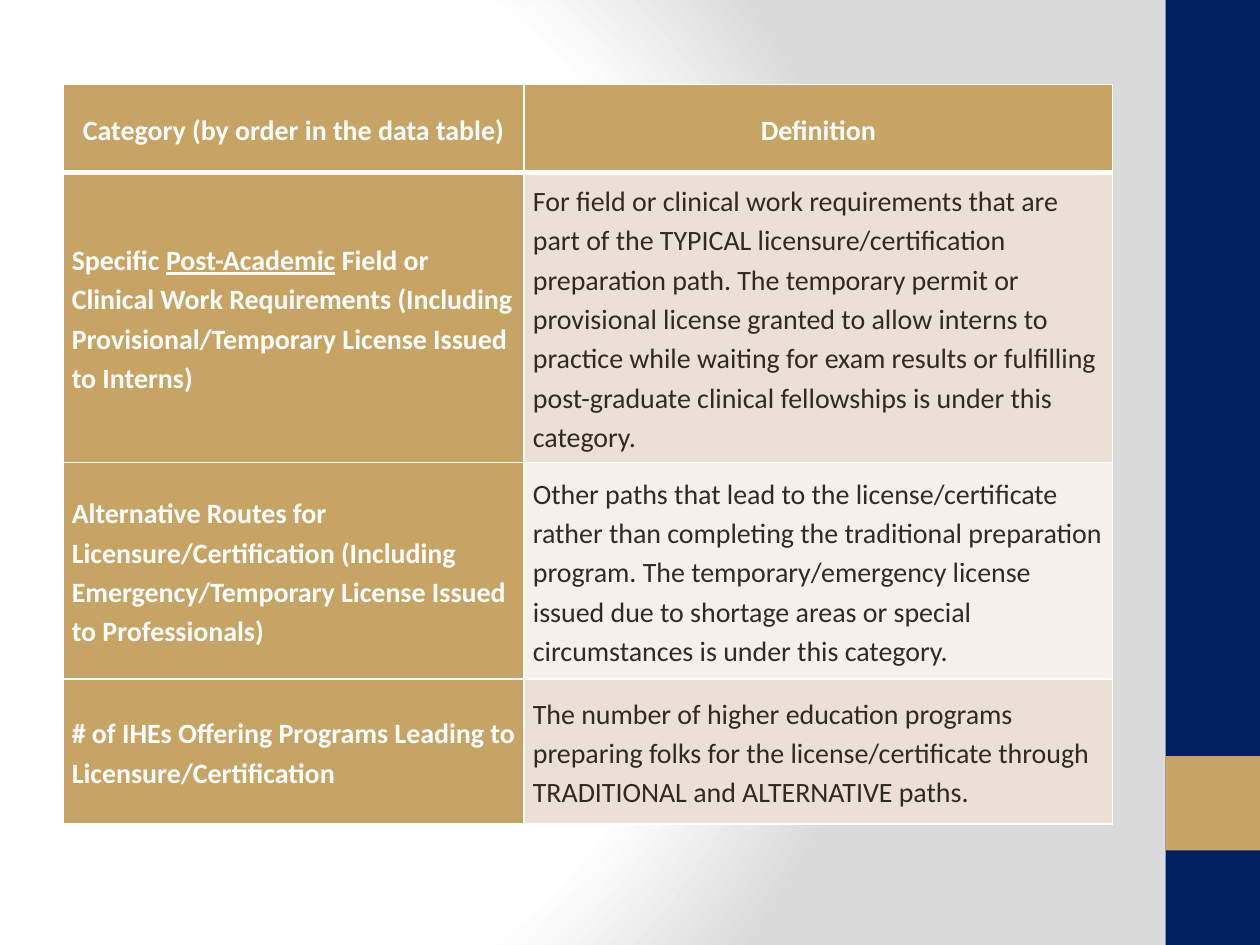
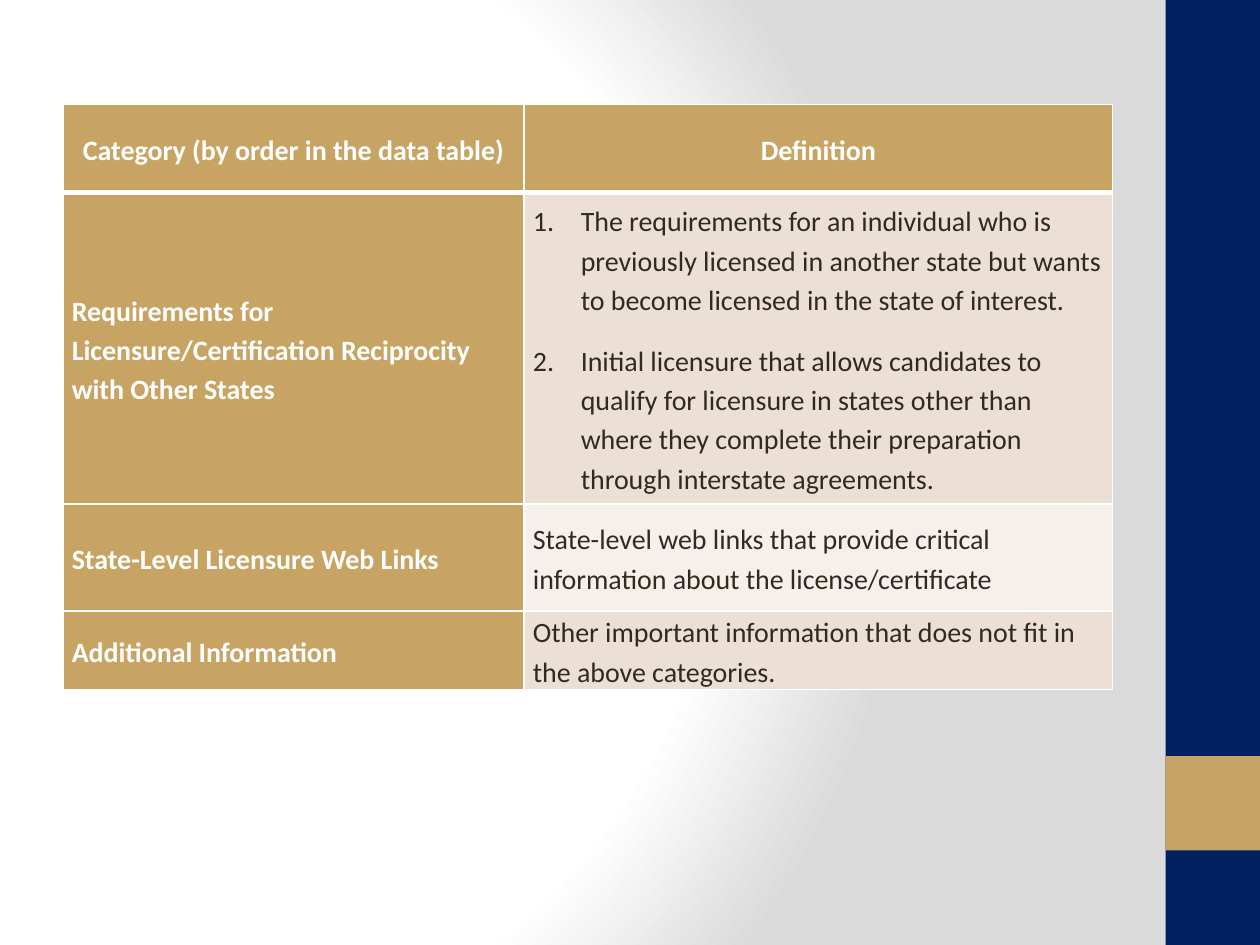
"""Build two slides of category definitions for licensure data."""
from dataclasses import dataclass

from pptx import Presentation
from pptx.dml.color import RGBColor
from pptx.enum.shapes import MSO_SHAPE
from pptx.enum.text import MSO_ANCHOR, PP_ALIGN
from pptx.oxml import parse_xml
from pptx.oxml.ns import nsdecls
from pptx.util import Emu, Inches, Pt

RECT = MSO_SHAPE.RECTANGLE
MIDDLE = MSO_ANCHOR.MIDDLE
LEFT, CENTER = PP_ALIGN.LEFT, PP_ALIGN.CENTER

WIDE, HIGH = Inches(10), Inches(7.5)
NAVY, GOLD, WHITE, GREY = "002060", "C8A464", "FFFFFF", "DADADA"
INK, SAND, CREAM = "2F2B20", "EBE0D3", "F5F0EA"
COLS = (36.6, 46.7)
SIDE = 5
INDENT = Inches(0.38)
HEAD = ("Category (by order in the data table)", ("Definition",))
FONT = {"name": "Calibri", "size": Pt(16)}
CELL = {
    "vertical_anchor": MIDDLE,
    "margin_left": Inches(0.07),
    "margin_right": Inches(0.07),
    "margin_top": 0,
    "margin_bottom": 0,
}
PARA = {"line_spacing": 1.15, "space_after": Pt(6)}


@dataclass
class Band:
    """A block of the side strip, in percent of the slide."""

    top: float
    height: float
    color: str


@dataclass
class Entry:
    """A table row: its name, its definitions and its height in percent."""

    name: str
    texts: tuple[str, ...]
    height: float


@dataclass
class Page:
    """A slide: the top of its table in percent, and the rows below the head."""

    top: float
    rows: list[Entry]


BANDS = (Band(0, 100, NAVY), Band(80, 10, GOLD))
PAGES = [
    Page(8.93, [
        Entry(
            "Specific _Post-Academic_ Field or Clinical Work Requirements "
            "(Including Provisional/Temporary License Issued to Interns)",
            ("For field or clinical work requirements that are part of the TYPICAL "
             "licensure/certification preparation path. The temporary permit or "
             "provisional license granted to allow interns to practice while waiting "
             "for exam results or fulfilling post-graduate clinical fellowships is "
             "under this category.",), 30.67),
        Entry(
            "Alternative Routes for Licensure/Certification (Including "
            "Emergency/Temporary License Issued to Professionals)",
            ("Other paths that lead to the license/certificate rather than completing "
             "the traditional preparation program. The temporary/emergency license "
             "issued due to shortage areas or special circumstances is under this "
             "category.",), 22.93),
        Entry(
            "# of IHEs Offering Programs Leading to Licensure/Certification",
            ("The number of higher education programs preparing folks for the "
             "license/certificate through TRADITIONAL and ALTERNATIVE paths.",), 15.33),
    ]),
    Page(11.07, [
        Entry(
            "Requirements for Licensure/Certification Reciprocity with Other States",
            ("The requirements for an individual who is previously licensed in another "
             "state but wants to become licensed in the state of interest.",
             "Initial licensure that allows candidates to qualify for licensure in "
             "states other than where they complete their preparation through "
             "interstate agreements."), 32.93),
        Entry(
            "State-Level Licensure Web Links",
            ("State-level web links that provide critical information about the "
             "license/certificate",), 11.33),
        Entry(
            "Additional Information",
            ("Other important information that does not fit in the above "
             "categories.",), 8.27),
    ]),
]


def across(share: float) -> Emu:
    """Turn a percent of the slide's width into a length."""
    return Emu(round(WIDE * share / 100))


def down(share: float) -> Emu:
    """Turn a percent of the slide's height into a length."""
    return Emu(round(HIGH * share / 100))


def paint(fill, color: str) -> None:
    """Fill with one solid colour."""
    fill.solid()
    fill.fore_color.rgb = RGBColor.from_string(color)


def apply(item, values: dict) -> None:
    """Set each format value on an object."""
    for key, value in values.items():
        setattr(item, key, value)


def shade(master) -> None:
    """Give the master its round white to grey backdrop."""
    master.background.fill.solid()
    holder = master.element.xpath(".//p:bgPr")[0]
    stops = "".join(
        f'<a:gs pos="{at * 1000}"><a:srgbClr val="{color}"/></a:gs>'
        for at, color in ((0, WHITE), (75, WHITE), (100, GREY))
    )
    holder.replace(holder[0], parse_xml(
        f'<a:gradFill {nsdecls("a")} rotWithShape="1"><a:gsLst>{stops}</a:gsLst>'
        '<a:path path="circle"><a:fillToRect l="20000" t="50000" r="100000" '
        'b="50000"/></a:path></a:gradFill>'))


def strip(slide) -> None:
    """Draw the side strip."""
    for band in BANDS:
        block = slide.shapes.add_shape(
            RECT, across(92.5), down(band.top), across(7.5), down(band.height))
        block.shadow.inherit = False
        paint(block.fill, band.color)
        block.line.fill.background()


def edge(cell, row: int) -> None:
    """Rule the cell in white, with a thick line under the head row."""
    widths = {"L": 1, "R": 1, "T": 3 if row == 1 else 1, "B": 3 if row == 0 else 1}
    props = cell._tc.get_or_add_tcPr()
    for spot, (side, width) in enumerate(widths.items()):
        props.insert(spot, parse_xml(
            f'<a:ln{side} {nsdecls("a")} w="{Pt(width)}"><a:solidFill>'
            f'<a:srgbClr val="{WHITE}"/></a:solidFill></a:ln{side}>'))


def number(para) -> None:
    """Number a paragraph with a hanging indent."""
    props = para._p.get_or_add_pPr()
    props.set("marL", str(INDENT))
    props.set("indent", str(-INDENT))
    props.append(parse_xml(
        f'<a:buFont {nsdecls("a")} typeface="+mj-lt"/>'))
    props.append(parse_xml(
        f'<a:buAutoNum {nsdecls("a")} type="arabicPeriod"/>'))


def write(cell, texts: tuple[str, ...], color: str, bold: bool, align) -> None:
    """Write paragraphs, underlining what stands between underscores."""
    frame = cell.text_frame
    for spot, text in enumerate(texts):
        para = frame.add_paragraph() if spot else frame.paragraphs[0]
        apply(para, PARA | {"alignment": align, "space_before": Pt(6 if spot else 0)})
        if len(texts) > 1:
            number(para)
        for part, words in enumerate(text.split("_")):
            run = para.add_run()
            run.text = words
            apply(run.font, FONT | {"bold": bold, "underline": part % 2 == 1})
            run.font.color.rgb = RGBColor.from_string(color)


def chart(slide, page: Page) -> None:
    """Draw the table of categories and definitions."""
    rows = [Entry(*HEAD, 9.33), *page.rows]
    table = slide.shapes.add_table(
        len(rows), len(COLS), across(SIDE), down(page.top), across(sum(COLS)),
        down(sum(row.height for row in rows))).table
    table.first_col = True
    for col, share in zip(table.columns, COLS):
        col.width = across(share)
    for r, row in enumerate(rows):
        table.rows[r].height = down(row.height)
        for c, texts in enumerate(((row.name,), row.texts)):
            cell = table.cell(r, c)
            label = r == 0 or c == 0
            apply(cell, CELL)
            paint(cell.fill, GOLD if label else SAND if r % 2 else CREAM)
            edge(cell, r)
            write(cell, texts, WHITE if label else INK, label,
                  LEFT if r else CENTER)


def main() -> None:
    """Build and save the deck."""
    deck = Presentation()
    apply(deck, {"slide_width": WIDE, "slide_height": HIGH})
    shade(deck.slide_master)
    for page in PAGES:
        slide = deck.slides.add_slide(deck.slide_layouts.get_by_name("Blank"))
        strip(slide)
        chart(slide, page)
    deck.save("out.pptx")


if __name__ == "__main__":
    main()
